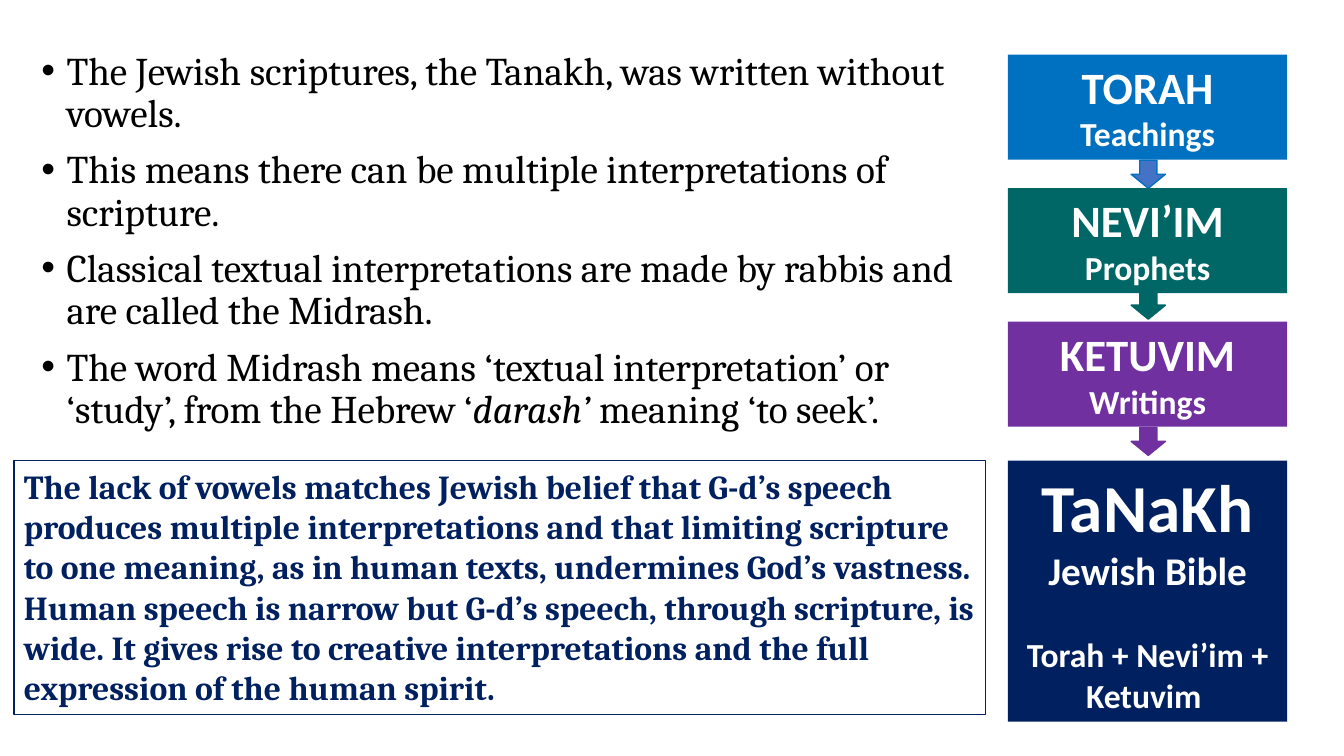
from dataclasses import dataclass

from pptx import Presentation
from pptx.dml.color import RGBColor
from pptx.enum.shapes import MSO_SHAPE
from pptx.enum.text import MSO_ANCHOR, MSO_AUTO_SIZE, PP_ALIGN
from pptx.util import Pt

RECT, DOWN_ARROW = MSO_SHAPE.RECTANGLE, MSO_SHAPE.DOWN_ARROW
TOP, NO_FIT = MSO_ANCHOR.TOP, MSO_AUTO_SIZE.NONE
LEFT, CENTER = PP_ALIGN.LEFT, PP_ALIGN.CENTER


@dataclass(frozen=True)
class Theme:
    serif: str = "Cambria"
    sans: str = "Calibri"
    black: str = "000000"
    white: str = "FFFFFF"
    navy: str = "002060"
    blue: str = "0070C0"
    arrow_blue: str = "4472C4"
    teal: str = "006666"
    purple: str = "7030A0"
    hero: int = 48
    heading: int = 32
    body: int = 28
    small: int = 24


@dataclass(frozen=True)
class Line:
    text: str
    size: int
    before: float = 0


@dataclass(frozen=True)
class Section:
    name: str
    meaning: str
    fill: str
    arrow_fill: str
    arrow_top: float


THEME = Theme()

SECTIONS = [
    Section("TORAH", "Teachings", THEME.blue, THEME.arrow_blue, 114.5),
    Section("NEVI’IM", "Prophets", THEME.teal, THEME.teal, 208),
    Section("KETUVIM", "Writings", THEME.purple, THEME.purple, 305.3),
]
TANAKH = [
    Line("TaNaKh", THEME.hero),
    Line("Jewish Bible", THEME.body),
    Line("Torah + Nevi’im + Ketuvim ", THEME.small, before=29.3),
]

# Each bullet is a list of (text, italic) runs.
BULLETS = [
    [("The Jewish scriptures, the Tanakh, was written without vowels.", False)],
    [("This means there can be multiple interpretations of scripture.", False)],
    [("Classical textual interpretations are made by rabbis and are called "
      "the Midrash.", False)],
    [("The word Midrash means ‘textual interpretation’ or ‘study’, from the "
      "Hebrew ‘", False),
     ("darash’ ", True),
     ("meaning ‘to seek’.", False)],
]
BELIEF = (
    "The lack of vowels matches Jewish belief that G-d’s speech produces "
    "multiple interpretations and that limiting scripture to one meaning, as "
    "in human texts, undermines God’s vastness. Human speech is narrow but "
    "G-d’s speech, through scripture, is wide. It gives rise to creative "
    "interpretations and the full expression of the human spirit."
)

COLUMN_LEFT, COLUMN_WIDTH = 720, 199.5
SECTION_TOP, SECTION_HEIGHT, SECTION_PITCH = 39, 75, 95.4
ARROW_WIDTH, ARROW_HEIGHT = 24.5, 20
LOWER_TOP = 329


def style(p, size: int, font: str, color: str, bold: bool = False) -> None:
    p.font.size = Pt(size)
    p.font.name = font
    p.font.bold = bold
    p.font.color.rgb = RGBColor.from_string(color)


def add_block(slide, kind, left: float, top: float, width: float, height: float,
              fill: str = "", line: str = "", line_width: float = 1):
    """Add a preset shape; an empty colour means no fill or no line."""
    sp = slide.shapes.add_shape(kind, Pt(left), Pt(top), Pt(width), Pt(height))
    sp.shadow.inherit = False
    if fill:
        sp.fill.solid()
        sp.fill.fore_color.rgb = RGBColor.from_string(fill)
    else:
        sp.fill.background()
    if line:
        sp.line.color.rgb = RGBColor.from_string(line)
        sp.line.width = Pt(line_width)
    else:
        sp.line.fill.background()
    return sp


def write_lines(sp, lines: list[Line], font: str, color: str, align) -> None:
    tf = sp.text_frame
    tf.word_wrap = True
    tf.vertical_anchor = TOP
    for i, line in enumerate(lines):
        p = tf.add_paragraph() if i else tf.paragraphs[0]
        p.text = line.text
        p.alignment = align
        p.space_before = Pt(line.before)
        style(p, line.size, font, color, bold=True)


def fill_bullets(sp) -> None:
    sp.left, sp.top, sp.width, sp.height = Pt(22.3), Pt(33), Pt(682), Pt(281.5)
    tf = sp.text_frame
    tf.auto_size = NO_FIT
    for i, runs in enumerate(BULLETS):
        p = tf.add_paragraph() if i else tf.paragraphs[0]
        p.line_spacing = 0.9
        p.space_before = Pt(10)
        pPr = p._p.get_or_add_pPr()
        pPr.set("marL", str(Pt(18)))
        pPr.set("indent", str(Pt(-18)))
        style(p, THEME.body, THEME.serif, THEME.black)
        for text, italic in runs:
            r = p.add_run()
            r.text = text
            if italic:
                r.font.italic = True


def add_section(slide, index: int, section: Section) -> None:
    sp = add_block(slide, RECT, COLUMN_LEFT, SECTION_TOP + index * SECTION_PITCH,
                   COLUMN_WIDTH, SECTION_HEIGHT, section.fill)
    lines = [Line(section.name, THEME.heading), Line(section.meaning, THEME.small)]
    write_lines(sp, lines, THEME.sans, THEME.white, CENTER)
    arrow_left = COLUMN_LEFT + (COLUMN_WIDTH - ARROW_WIDTH) / 2 + 0.5
    add_block(slide, DOWN_ARROW, arrow_left, section.arrow_top,
              ARROW_WIDTH, ARROW_HEIGHT, section.arrow_fill, section.fill)


def main() -> None:
    prs = Presentation()
    prs.slide_width, prs.slide_height = Pt(960), Pt(540)
    slide = prs.slides.add_slide(prs.slide_layouts[1])
    title = slide.shapes.title.element
    title.getparent().remove(title)
    fill_bullets(slide.placeholders[1])

    sp = add_block(slide, RECT, COLUMN_LEFT, LOWER_TOP, COLUMN_WIDTH, 186.5, THEME.navy)
    write_lines(sp, TANAKH, THEME.sans, THEME.white, CENTER)
    for i, section in enumerate(SECTIONS):
        add_section(slide, i, section)

    sp = add_block(slide, RECT, 10, LOWER_TOP, 694, 181.5,
                   line=THEME.navy, line_width=0.75)
    write_lines(sp, [Line(BELIEF, THEME.small)], THEME.serif, THEME.navy, LEFT)
    prs.save("out.pptx")


if __name__ == "__main__":
    main()
